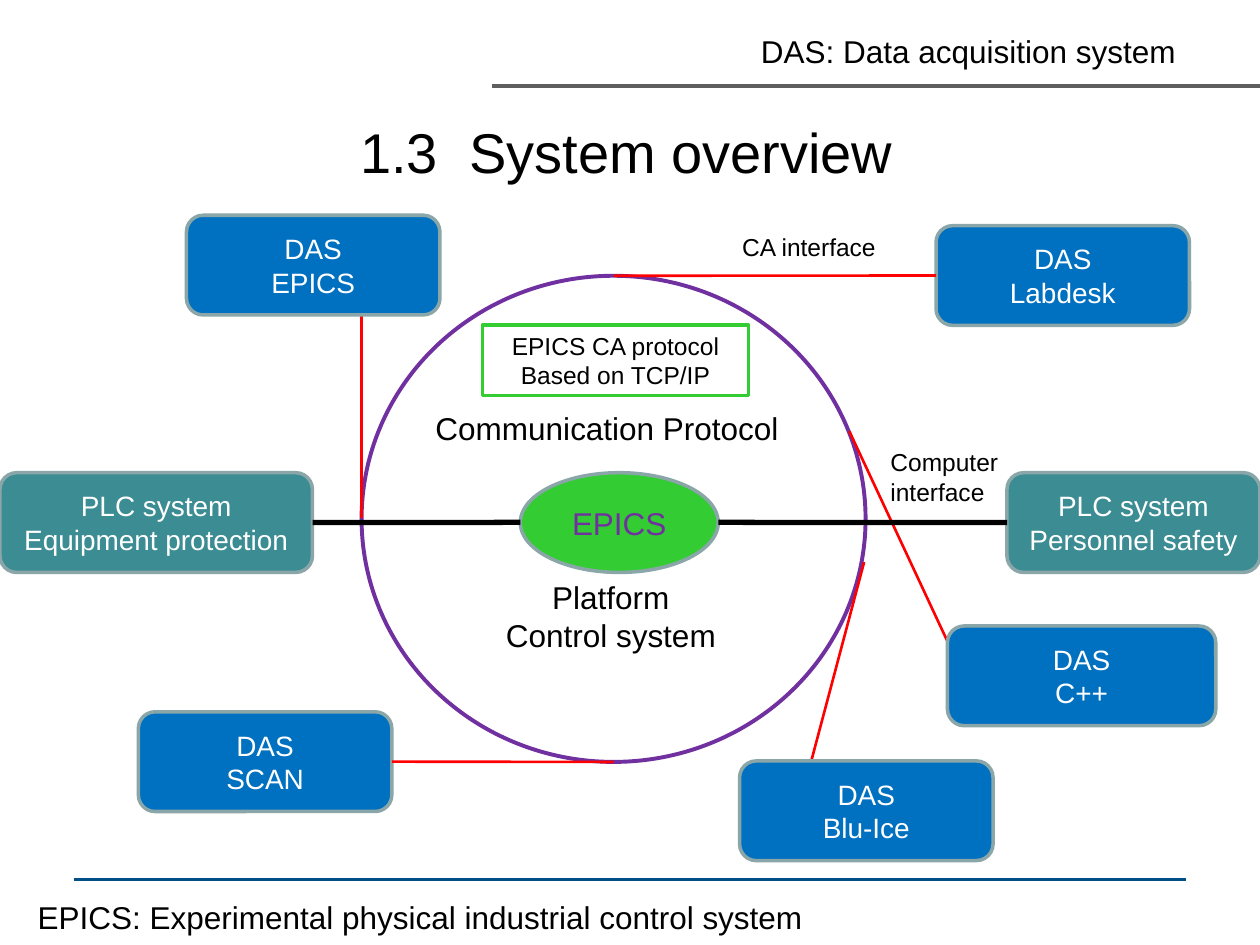
import pptx
import pptx.util
import pptx.dml.color
import pptx.enum.shapes
import pptx.enum.text
import lxml.etree
import pptx.oxml.ns

Cm = pptx.util.Cm
Pt = pptx.util.Pt
KIND = pptx.enum.shapes.MSO_SHAPE
ALIGN = pptx.enum.text.PP_ALIGN
ANCHOR = pptx.enum.text.MSO_ANCHOR
FIT = pptx.enum.text.MSO_AUTO_SIZE

HEX = {
    "black": "000000", "white": "FFFFFF", "gray": "5F5F5F", "navy": "005088",
    "violet": "7030A0", "green": "33CC33", "teal": "3C8C93", "blue": "0070C0",
    "edge": "8AA6A8", "red": "FF0000",
}
COLOR = {name: pptx.dml.color.RGBColor.from_string(code) for name, code in HEX.items()}


def write(shape, text, size, color, align):
    """Fill a shape with text and format every run."""
    frame = shape.text_frame
    frame.text = text
    for par in frame.paragraphs:
        par.alignment = align
        for run in par.runs:
            run.font.name = "Arial"
            run.font.size = Pt(size)
            run.font.color.rgb = COLOR[color]


def link(start, end, color, width):
    """Draw a straight line without shadow between two points in cm."""
    line = shapes.add_connector(
        pptx.enum.shapes.MSO_CONNECTOR.STRAIGHT, *map(Cm, start + end))
    line.line.color.rgb = COLOR[color]
    line.line.width = Pt(width)
    lxml.etree.SubElement(line._element.spPr, pptx.oxml.ns.qn("a:effectLst"))
    return line


deck = pptx.Presentation()
deck.slide_width, deck.slide_height = Cm(25.4), Cm(19.05)
slide = deck.slides.add_slide(deck.slide_layouts[5])
shapes = slide.shapes

# Title and rules
title = shapes.title
title.left, title.top, title.width, title.height = Cm(1.7), Cm(2.13), Cm(21.87), Cm(1.85)
title.text_frame.auto_size = FIT.NONE
title.text_frame.vertical_anchor = ANCHOR.MIDDLE
write(title, "1.3  System overview", 32, "black", ALIGN.CENTER)
link((9.91, 1.73), (25.4, 1.73), "gray", 2.25)
link((1.5, 17.73), (23.9, 17.73), "navy", 2.25)

# Ring, and the links that end away from the middle of a side
ring = shapes.add_shape(KIND.OVAL, Cm(7.29), Cm(5.56), Cm(10.16), Cm(9.8))
ring.shadow.inherit = False
ring.fill.background()
ring.line.color.rgb = COLOR["violet"]
ring.line.width = Pt(2.25)

for start, end in [
    ((17.12, 8.69), (19.1, 12.93)),
    ((17.42, 11.33), (16.36, 15.32)),
    ((7.29, 10.44), (7.29, 6.35)),
]:
    link(start, end, "red", 1.5)

# Nodes: kind, left, top, width, height, fill, edge, text, size, text colour
BOX = KIND.ROUNDED_RECTANGLE
nodes = {}
for kind, left, top, width, height, fill, edge, text, size, ink in [
    (KIND.OVAL, 10.49, 9.53, 3.99, 2.01, "green", "edge", "EPICS", 18, "violet"),
    (KIND.RECTANGLE, 9.73, 6.55, 5.36, 1.42, "white", "green",
     "EPICS CA protocol\nBased on TCP/IP", 14, "black"),
    (BOX, 20.3, 9.53, 5.1, 2.01, "teal", "edge", "PLC system\nPersonnel safety", 16, "white"),
    (BOX, 0, 9.53, 6.3, 2.01, "teal", "edge", "PLC system\nEquipment protection", 16, "white"),
    (BOX, 18.87, 4.55, 5.11, 2.01, "blue", "edge", "DAS\nLabdesk", 16, "white"),
    (BOX, 19.1, 12.62, 5.41, 2.01, "blue", "edge", "DAS\nC++", 16, "white"),
    (BOX, 14.91, 15.34, 5.11, 2.01, "blue", "edge", "DAS\nBlu-Ice", 16, "white"),
    (BOX, 2.79, 14.35, 5.11, 2.01, "blue", "edge", "DAS\nSCAN", 16, "white"),
    (BOX, 3.76, 4.34, 5.11, 2.01, "blue", "edge", "DAS\nEPICS", 16, "white"),
]:
    node = shapes.add_shape(kind, Cm(left), Cm(top), Cm(width), Cm(height))
    node.shadow.inherit = False
    node.fill.solid()
    node.fill.fore_color.rgb = COLOR[fill]
    node.line.color.rgb = COLOR[edge]
    node.line.width = Pt(2)
    frame = node.text_frame
    frame.vertical_anchor = ANCHOR.MIDDLE
    frame.margin_left = frame.margin_right = Cm(0.1)
    write(node, text, size, ink, ALIGN.CENTER)
    nodes[text.split("\n")[-1]] = node

# Links joined to the side of a box (1 left, 3 right)
for start, end, name, side, color, width in [
    ((14.48, 10.53), (20.3, 10.53), "Personnel safety", 1, "black", 3),
    ((10.49, 10.53), (6.3, 10.53), "Equipment protection", 3, "black", 3),
    ((12.37, 5.56), (18.87, 5.56), "Labdesk", 1, "red", 1.5),
    ((12.37, 15.36), (7.9, 15.36), "SCAN", 3, "red", 1.5),
]:
    link(start, end, color, width).end_connect(nodes[name], side)

# Labels
for left, top, width, height, text, size, align in [
    (15.09, 0.53, 8.97, 1.02, "DAS: Data acquisition system", 18, ALIGN.LEFT),
    (14.71, 4.55, 3.23, 0.86, "CA interface", 14, ALIGN.LEFT),
    (8.53, 8.13, 7.49, 1.02, "Communication Protocol", 18, ALIGN.LEFT),
    (17.7, 8.89, 2.84, 1.44, "Computer\ninterface", 14, ALIGN.LEFT),
    (8.76, 11.53, 7.11, 1.8, "Platform\nControl system", 18, ALIGN.CENTER),
    (0.51, 17.98, 16.08, 1.02,
     "EPICS: Experimental physical industrial control system", 18, ALIGN.LEFT),
]:
    label = shapes.add_textbox(Cm(left), Cm(top), Cm(width), Cm(height))
    label.text_frame.word_wrap = align == ALIGN.CENTER
    label.text_frame.auto_size = FIT.SHAPE_TO_FIT_TEXT
    write(label, text, size, "black", align)

deck.save("out.pptx")
